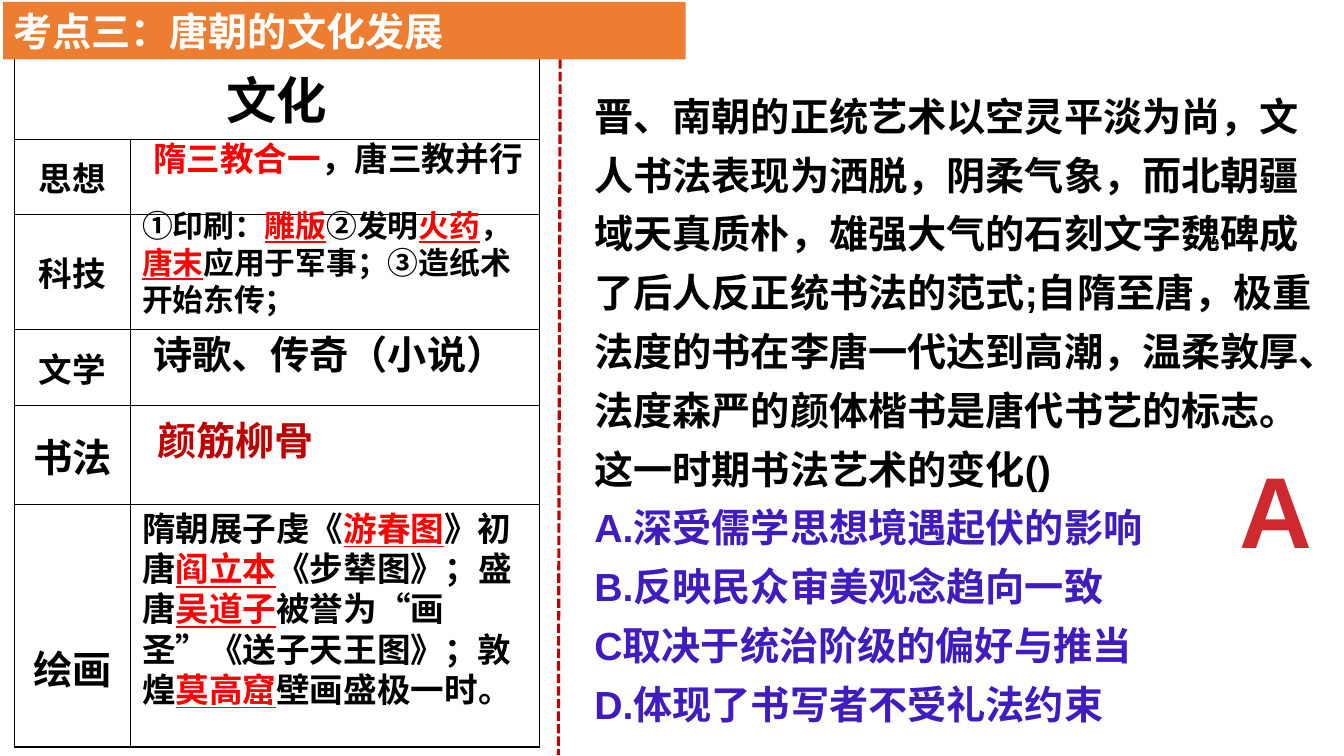
from dataclasses import dataclass
from typing import Optional

from lxml.etree import SubElement
from pptx import Presentation
from pptx.dml.color import RGBColor
from pptx.enum.dml import MSO_LINE
from pptx.enum.shapes import MSO_CONNECTOR, MSO_SHAPE
from pptx.enum.text import MSO_ANCHOR, MSO_AUTO_SIZE, PP_ALIGN
from pptx.oxml.ns import qn
from pptx.util import Cm, Pt


@dataclass(frozen=True)
class Theme:
    black: str = "000000"
    white: str = "FFFFFF"
    banner: str = "ED7D31"
    key: str = "FF0000"
    crimson: str = "C00000"
    option: str = "401BC0"
    answer: str = "CE292F"
    latin: str = "Arial"
    chinese: str = "Noto Sans CJK SC"
    detail: int = 22
    medium: int = 24
    large: int = 28
    heading: int = 36
    huge: int = 72


THEME = Theme()


@dataclass(frozen=True)
class Span:
    text: str
    color: str = THEME.black
    underline: bool = False


@dataclass(frozen=True)
class Note:
    left: float
    top: float
    width: float
    height: float
    lines: list[list[Span]]
    size: int = THEME.large
    font: str = THEME.chinese
    wrap: bool = True
    align: PP_ALIGN = PP_ALIGN.LEFT
    spacing: Optional[float] = None
    fill: Optional[str] = None


@dataclass(frozen=True)
class Topic:
    name: str
    height: float
    size: int
    font: str


def key(text: str) -> Span:
    return Span(text, THEME.key, True)


def write_line(paragraph, spans: list[Span], size: int, font: str, align: PP_ALIGN) -> None:
    paragraph.alignment = align
    paragraph.font.size = Pt(size)
    paragraph.font.bold = True
    paragraph.font.name = font
    defaults = paragraph.font._element
    SubElement(defaults, qn("a:ea")).set("typeface", THEME.chinese)
    for span in spans:
        run = paragraph.add_run()
        run.text = span.text
        run.font.color.rgb = RGBColor.from_string(span.color)
        if span.underline:
            run.font.underline = True


def draw_note(slide, note: Note) -> None:
    box = [Cm(v) for v in (note.left, note.top, note.width, note.height)]
    if note.fill:
        shape = slide.shapes.add_shape(MSO_SHAPE.RECTANGLE, *box)
        shape.shadow.inherit = False
        shape.fill.solid()
        shape.fill.fore_color.rgb = RGBColor.from_string(note.fill)
        shape.line.fill.background()
    else:
        shape = slide.shapes.add_textbox(*box)
    frame = shape.text_frame
    frame.word_wrap = note.wrap
    frame.auto_size = MSO_AUTO_SIZE.SHAPE_TO_FIT_TEXT
    frame.vertical_anchor = MSO_ANCHOR.TOP
    for index, spans in enumerate(note.lines):
        paragraph = frame.add_paragraph() if index else frame.paragraphs[0]
        write_line(paragraph, spans, note.size, note.font, note.align)
        if note.spacing:
            paragraph.line_spacing = note.spacing


def frame_cell(cell) -> None:
    cell.fill.background()
    properties = cell._tc.get_or_add_tcPr()
    for index, side in enumerate(("lnL", "lnR", "lnT", "lnB")):
        border = properties.makeelement(qn(f"a:{side}"), {"w": str(Pt(1))})
        fill = SubElement(border, qn("a:solidFill"))
        SubElement(fill, qn("a:srgbClr")).set("val", THEME.black)
        properties.insert(index, border)


def draw_table(slide, topics: list[Topic]) -> None:
    widths = (2.92, 10.31)
    height = sum(topic.height for topic in topics)
    table = slide.shapes.add_table(
        len(topics), 2, Cm(0.36), Cm(1.42), Cm(sum(widths)), Cm(height)).table
    table.first_row = table.horz_banding = False
    for column, width in zip(table.columns, widths):
        column.width = Cm(width)
    for row, topic in zip(table.rows, topics):
        row.height = Cm(topic.height)
        for cell in row.cells:
            frame_cell(cell)
        label = row.cells[0]
        label.vertical_anchor = MSO_ANCHOR.MIDDLE
        write_line(label.text_frame.paragraphs[0], [Span(topic.name)],
                   topic.size, topic.font, PP_ALIGN.CENTER)
    table.cell(0, 0).merge(table.cell(0, 1))
    # The last label sits low in its tall row
    painting = table.cell(len(topics) - 1, 0)
    painting.vertical_anchor = MSO_ANCHOR.BOTTOM
    painting.margin_bottom = Cm(1.3)


def draw_divider(slide) -> None:
    divider = slide.shapes.add_connector(
        MSO_CONNECTOR.STRAIGHT, Cm(14.12), Cm(0.23), Cm(14.07), Cm(19.02))
    divider.line.color.rgb = RGBColor.from_string(THEME.crimson)
    divider.line.width = Pt(2.25)
    divider.line.dash_style = MSO_LINE.SQUARE_DOT
    SubElement(divider._element.spPr, qn("a:effectLst"))


TOPICS = [
    Topic("文化", 2.08, THEME.heading, THEME.latin),
    Topic("思想", 1.9, THEME.medium, THEME.chinese),
    Topic("科技", 2.9, THEME.medium, THEME.chinese),
    Topic("文学", 1.9, THEME.medium, THEME.latin),
    Topic("书法", 2.51, THEME.large, THEME.latin),
    Topic("绘画", 6.1, THEME.large, THEME.latin),
]

QUESTION = (
    "晋、南朝的正统艺术以空灵平淡为尚，文人书法表现为洒脱，阴柔气象，而北朝疆域天真质朴，"
    "雄强大气的石刻文字魏碑成了后人反正统书法的范式;自隋至唐，极重法度的书在李唐一代达到高潮，"
    "温柔敦厚、法度森严的颜体楷书是唐代书艺的标志。这一时期书法艺术的变化()"
)
OPTIONS = [
    "A.深受儒学思想境遇起伏的影响",
    "B.反映民众审美观念趋向一致",
    "C取决于统治阶级的偏好与推当",
    "D.体现了书写者不受礼法约束",
]

NOTES = [
    # Technology, literature, calligraphy
    Note(3.33, 5.08, 9.98, 3.07, [[
        Span("①印刷："), key("雕版"), Span("②发明"), key("火药"), Span("，"),
        key("唐末"), Span("应用于军事；③造纸术开始东传；")]], THEME.detail),
    Note(3.61, 8.2, 9.73, 1.45, [[Span("诗歌、传奇（小说）")]]),
    Note(3.71, 10.36, 4.47, 1.45, [[Span("颜筋柳骨", THEME.crimson)]], wrap=False),
    # Title banner
    Note(0.08, 0.05, 17.2, 1.45, [[Span("考点三：唐朝的文化发展", THEME.white)]],
         font=THEME.latin, fill=THEME.banner),
    # Thought
    Note(3.61, 3.35, 9.86, 1.27, [[Span("隋三教合一", THEME.key), Span("，唐三教并行")]],
         THEME.medium, wrap=False),
    # Question, options and answer
    Note(14.73, 1.9, 19.08, 16.71,
         [[Span(QUESTION)], *([Span(option, THEME.option)] for option in OPTIONS)],
         font=THEME.latin, spacing=1.25),
    Note(30.99, 11.15, 2.34, 3.33, [[Span("A", THEME.answer)]], THEME.huge,
         THEME.latin, wrap=False, align=PP_ALIGN.CENTER),
    # Painting
    Note(3.33, 12.67, 9.98, 5.38, [[
        Span("隋朝展子虔《"), key("游春图"), Span("》初唐"), key("阎立本"),
        Span("《步辇图》；盛唐"), key("吴道子"),
        Span("被誉为“画圣”《送子天王图》；敦煌"), key("莫高窟"),
        Span("壁画盛极一时。")]], THEME.medium),
]


def main() -> None:
    deck = Presentation()
    deck.slide_width, deck.slide_height = Cm(33.87), Cm(19.05)
    slide = deck.slides.add_slide(deck.slide_layouts[6])
    draw_table(slide, TOPICS)
    draw_divider(slide)
    for note in NOTES:
        draw_note(slide, note)
    deck.save("out.pptx")


if __name__ == "__main__":
    main()
